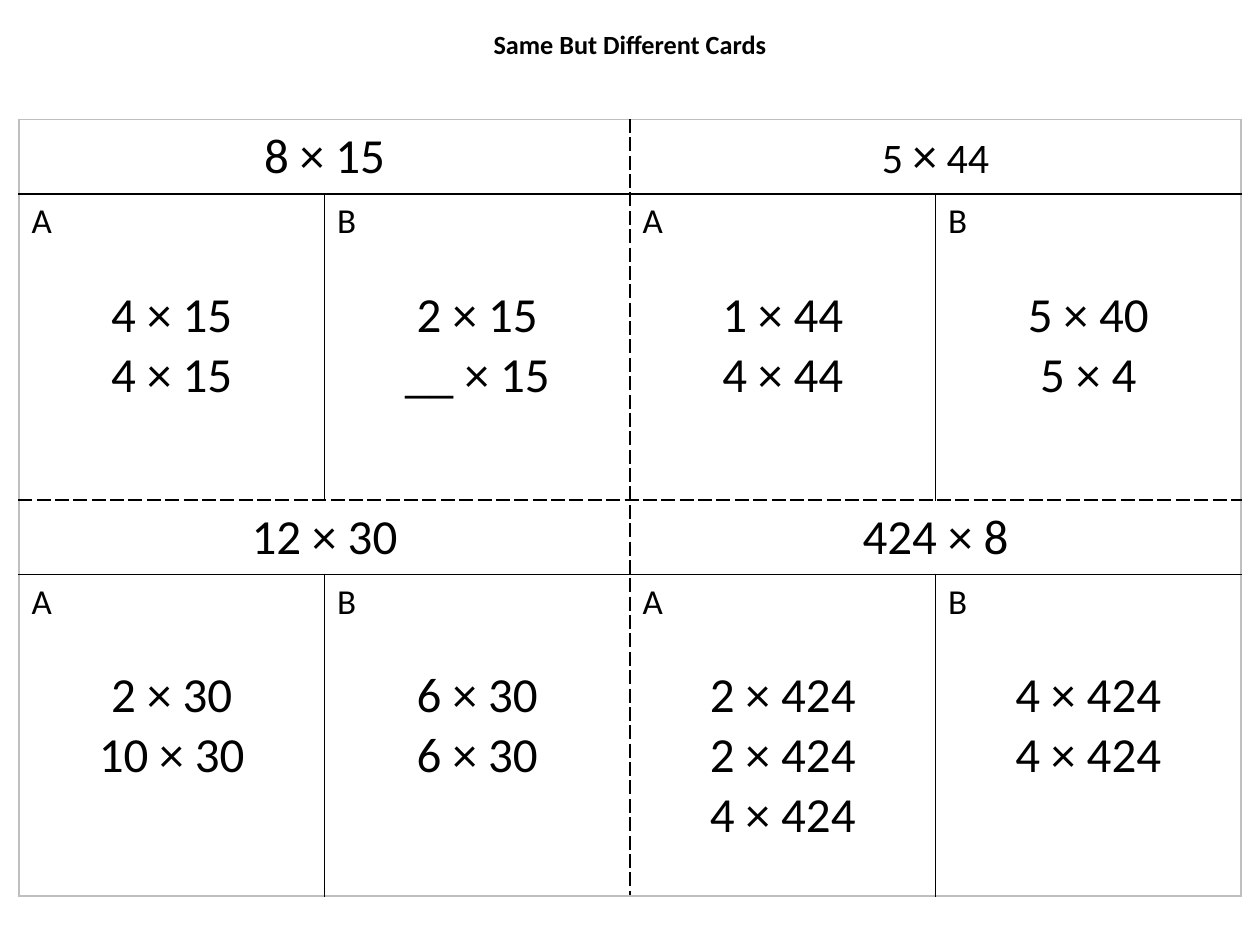
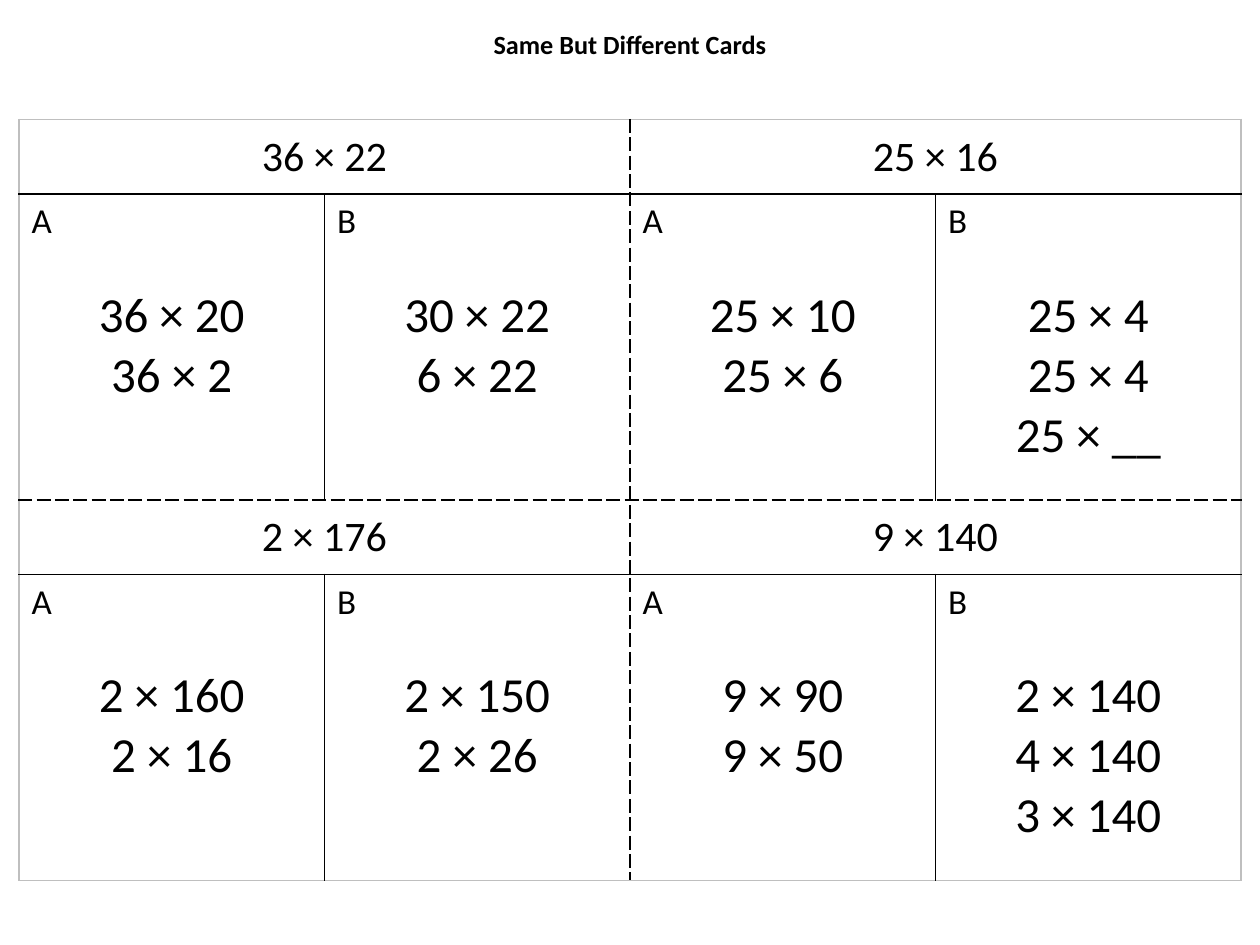
from lxml.etree import SubElement
from pptx import Presentation
from pptx.dml.color import RGBColor
from pptx.enum.shapes import MSO_SHAPE
from pptx.enum.text import MSO_ANCHOR, PP_ALIGN
from pptx.oxml.ns import qn
from pptx.util import Inches, Pt

FONT = "Calibri"
BLACK, WHITE, GREY = "000000", "FFFFFF", "BFBFBF"
TITLE = "Same But Different Cards"
HEAD_H, BODY_H = 0.59, 2.43
LABEL_GAP = 24.4  # one 20 pt line between the label and the sums

# Each card: heading runs (text, size), sums of strategy A, sums of strategy B
SLIDES = [
    (2.55, [
        ([("8 × 15", 28)], ["4 × 15", "4 × 15"], ["2 × 15", "__ × 15"]),
        ([("5 ", 24), ("×", 28), (" 44", 24)],
         ["1 × 44", "4 × 44"], ["5 × 40", "5 × 4"]),
        ([("12 × 30", 28)], ["2 × 30", "10 × 30"], ["6 × 30", "6 × 30"]),
        ([("424 × 8", 28)],
         ["2 × 424", "2 × 424", "4 × 424"], ["4 × 424", "4 × 424"]),
    ]),
    (BODY_H, [
        ([("36 × 22", 24)], ["36 × 20", "36 × 2"], ["30 × 22", "6 × 22"]),
        ([("25 × 16", 24)],
         ["25 × 10", "25 × 6"], ["25 × 4", "25 × 4", "25 × __"]),
        ([("2 × 176", 24)], ["2 × 160", "2 × 16"], ["2 × 150", "2 × 26"]),
        ([("9 × 140", 24)],
         ["9 × 90", "9 × 50"], ["2 × 140", "4 × 140", "3 × 140"]),
    ]),
]


def rgb(color):
    return RGBColor.from_string(color)


def write(p, text, size=28, bold=False, color=BLACK, align=PP_ALIGN.CENTER,
          before=0):
    """Add a run to a paragraph and format both."""
    p.alignment = align
    if before:
        p.space_before = Pt(before)
    r = p.add_run()
    r.text = text
    r.font.name, r.font.size, r.font.bold = FONT, Pt(size), bold
    r.font.color.rgb = rgb(color)


def set_border(cell, index, side, line):
    """Draw one side; line counts grid lines: outer, solid, cut, solid, outer."""
    ln = SubElement(cell._tc.get_or_add_tcPr(), qn("a:ln" + side),
                    w=str(Pt(1)), cap="flat", cmpd="sng", algn="ctr")
    fill = SubElement(ln, qn("a:solidFill"))
    SubElement(fill, qn("a:srgbClr"), val=GREY if line in (0, 4) else BLACK)
    SubElement(ln, qn("a:prstDash"), val="sysDash" if line == 2 else "solid")
    cell._tc.tcPr.insert(index, ln)


def frame_cell(cell, row, col):
    cell.fill.background()
    right = col + 2 if cell.is_merge_origin else col + 1
    sides = [("L", col), ("R", right), ("T", row), ("B", row + 1)]
    if cell.is_spanned:
        sides = sides[1:]
    for index, (side, line) in enumerate(sides):
        set_border(cell, index, side, line)


def add_title(s, x, y, w, h):
    sp = s.shapes.add_shape(MSO_SHAPE.RECTANGLE, x, y, w, h)
    sp.shadow.inherit = False
    sp.fill.solid()
    sp.fill.fore_color.rgb = rgb(WHITE)
    sp.line.color.rgb = rgb(WHITE)
    sp.line.width = Pt(1)
    tf = sp.text_frame
    tf.word_wrap = True
    tf.vertical_anchor = MSO_ANCHOR.MIDDLE
    write(tf.paragraphs[0], TITLE, size=15, bold=True)


def fill_card(table, row, col, heading, *strategies):
    # Heading across both strategies
    head = table.cell(row, col)
    head.merge(table.cell(row, col + 1))
    head.vertical_anchor = MSO_ANCHOR.MIDDLE
    for text, size in heading:
        write(head.text_frame.paragraphs[0], text, size=size)
    # Strategies A and B
    for i, (label, sums) in enumerate(zip("AB", strategies)):
        tf = table.cell(row + 1, col + i).text_frame
        write(tf.paragraphs[0], label, size=20, align=PP_ALIGN.LEFT)
        for n, text in enumerate(sums):
            write(tf.add_paragraph(), text, before=0 if n else LABEL_GAP)


def add_cards(s, x, y, w, last_h, cards):
    heights = [Inches(h) for h in (HEAD_H, BODY_H, HEAD_H, last_h)]
    table = s.shapes.add_table(4, 4, x, y, w, sum(heights)).table
    table.first_row = table.horz_banding = False
    for row, height in zip(table.rows, heights):
        row.height = height
    for i, card in enumerate(cards):
        fill_card(table, i // 2 * 2, i % 2 * 2, *card)
    for row in range(4):
        for col in range(4):
            frame_cell(table.cell(row, col), row, col)


def main():
    prs = Presentation()
    prs.slide_width, prs.slide_height = Inches(10), Inches(7.5)
    margin = Inches(0.15)
    width = prs.slide_width - 2 * margin
    for last_h, cards in SLIDES:
        s = prs.slides.add_slide(prs.slide_layouts[6])
        add_title(s, margin, Inches(0.12), width, Inches(0.46))
        add_cards(s, margin, Inches(0.95), width, last_h, cards)
    prs.save("out.pptx")


if __name__ == "__main__":
    main()
